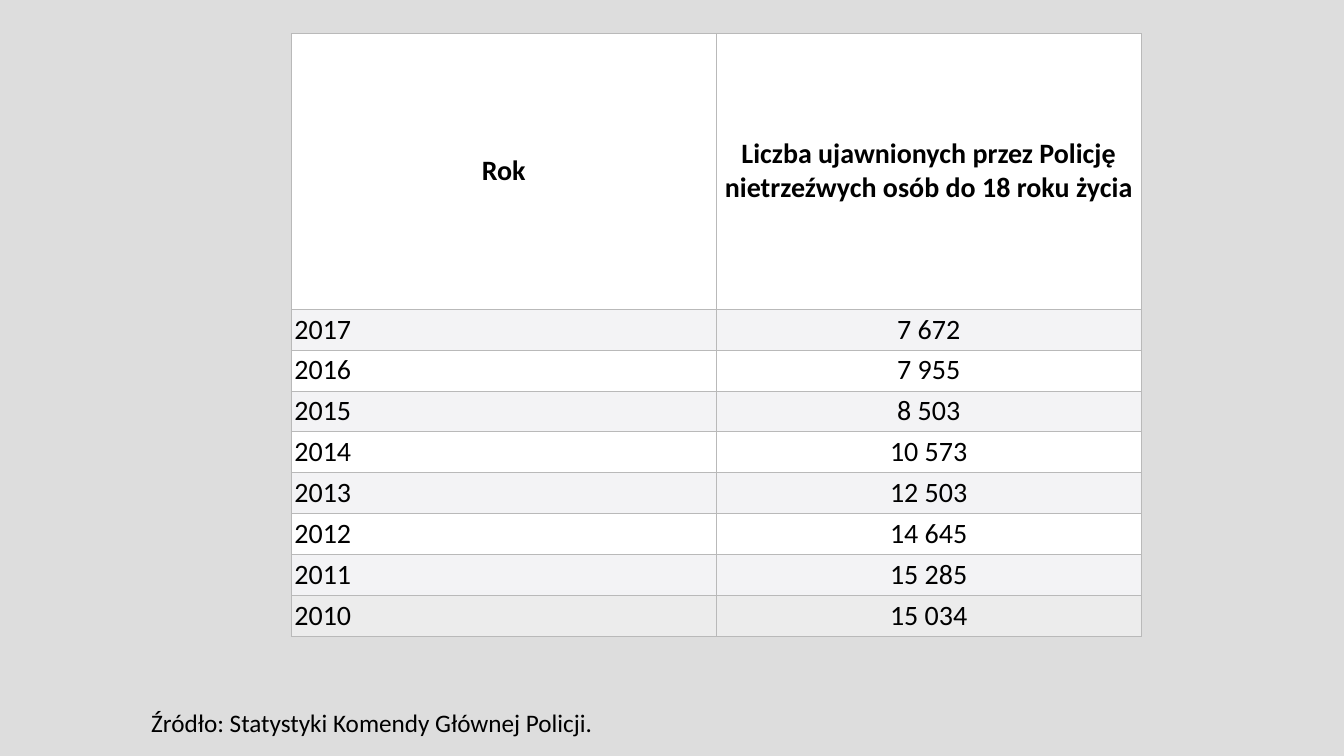
from lxml import etree
from pptx import Presentation
from pptx.dml.color import RGBColor
from pptx.enum.text import MSO_ANCHOR, PP_ALIGN
from pptx.oxml.ns import qn
from pptx.util import Cm, Pt

LEFT, CENTER = PP_ALIGN.LEFT, PP_ALIGN.CENTER
TOP, MIDDLE = MSO_ANCHOR.TOP, MSO_ANCHOR.MIDDLE

COLORS = {
    "background": "DDDDDD",
    "text": "000000",
    "border": "B9B9B9",
    "plain": "FFFFFF",
    "band": "F3F3F5",
    "last": "ECECEC",
}
HEADER = ("Rok", "Liczba ujawnionych przez Policję nietrzeźwych osób do 18 roku życia")
DETECTIONS = [
    ("2017", "7 672"),
    ("2016", "7 955"),
    ("2015", "8 503"),
    ("2014", "10 573"),
    ("2013", "12 503"),
    ("2012", "14 645"),
    ("2011", "15 285"),
    ("2010", "15 034"),
]


class SlideBuilder:
    """Draws styled tables and text on one slide."""

    font_name = "Calibri"
    border_width = Pt(0.5)
    side_margin = Cm(0.08)

    def __init__(self, slide):
        self.slide = slide

    def color(self, name):
        return RGBColor.from_string(COLORS[name])

    def background(self, name):
        fill = self.slide.background.fill
        fill.solid()
        fill.fore_color.rgb = self.color(name)

    def set_text(self, text_frame, text, size, alignment=LEFT, bold=False):
        paragraph = text_frame.paragraphs[0]
        paragraph.text = text
        paragraph.alignment = alignment
        font = paragraph.font
        font.name, font.size, font.bold = self.font_name, Pt(size), bold
        font.color.rgb = self.color("text")

    def borders(self, cell):
        properties = cell._tc.get_or_add_tcPr()
        for side in ("a:lnL", "a:lnR", "a:lnT", "a:lnB"):
            line = etree.SubElement(properties, qn(side), w=str(self.border_width))
            fill = etree.SubElement(line, qn("a:solidFill"))
            etree.SubElement(fill, qn("a:srgbClr"), val=COLORS["border"])

    def cell(self, cell, text, fill, alignment, header):
        self.borders(cell)
        cell.fill.solid()
        cell.fill.fore_color.rgb = self.color(fill)
        cell.margin_left = cell.margin_right = self.side_margin
        cell.margin_top = cell.margin_bottom = Cm(0.18) if header else Cm(0.08)
        cell.vertical_anchor = MIDDLE if header else TOP
        self.set_text(cell.text_frame, text, 20, alignment, header)

    def table(self, left, top, column_width, header_height, row_height, header, records):
        rows = [header, *records]
        count = len(rows)
        table = self.slide.shapes.add_table(
            count, len(header), Cm(left), Cm(top),
            Cm(column_width * len(header)),
            Cm(header_height + row_height * len(records)),
        ).table
        for column in table.columns:
            column.width = Cm(column_width)
        for row_index, values in enumerate(rows):
            is_header = row_index == 0
            table.rows[row_index].height = Cm(header_height if is_header else row_height)
            fill = "band" if row_index % 2 else "plain"
            if row_index == count - 1:
                fill = "last"
            for column_index, text in enumerate(values):
                alignment = CENTER if is_header or column_index else LEFT
                self.cell(table.cell(row_index, column_index), text, fill, alignment, is_header)

    def text(self, left, top, width, height, text, size):
        shape = self.slide.shapes.add_textbox(Cm(left), Cm(top), Cm(width), Cm(height))
        shape.text_frame.word_wrap = False
        self.set_text(shape.text_frame, text, size)


def main():
    presentation = Presentation()
    presentation.slide_width, presentation.slide_height = Cm(33.87), Cm(19.05)
    builder = SlideBuilder(presentation.slides.add_slide(presentation.slide_layouts[6]))
    builder.background("background")
    builder.table(7.34, 0.84, 10.71, 6.95, 1.03, HEADER, DETECTIONS)
    builder.text(3.56, 17.7, 12.04, 1.02, "Źródło: Statystyki Komendy Głównej Policji.", 18)
    presentation.save("out.pptx")


if __name__ == "__main__":
    main()
